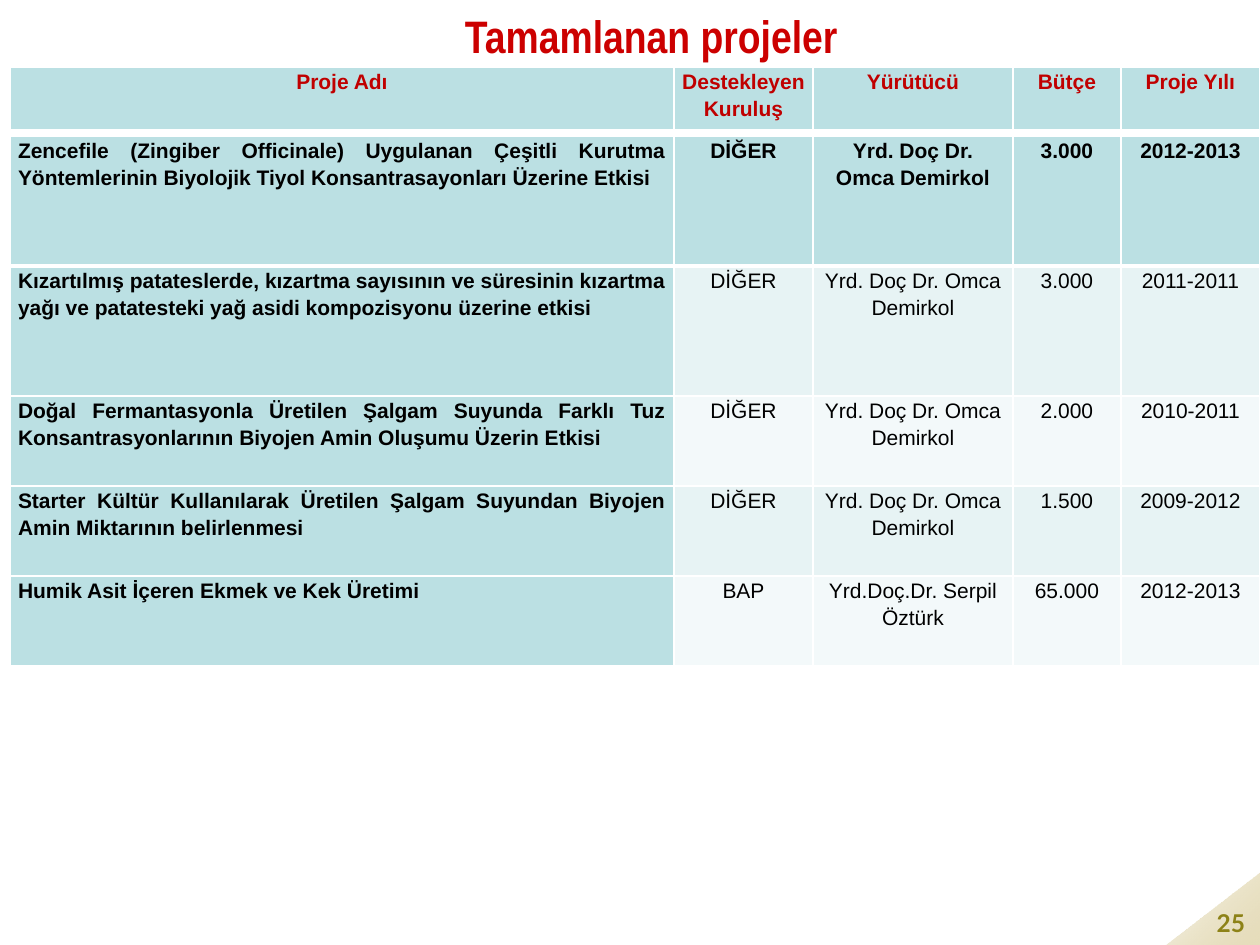
import pptx
import pptx.util
import pptx.dml.color
import pptx.enum.shapes
import pptx.enum.text
import pptx.oxml
import pptx.oxml.ns

COLORS = {"header": "C00000", "title": "CC0000", "text": "000000", "line": "FFFFFF",
          "strong": "BBE0E3", "band": "E7F3F4", "pale": "F3F9FA",
          "corner": "CEBC7A", "number": "8D8217", "shadow": "B2B2B2"}
ALIGN = pptx.enum.text.PP_ALIGN
NAMESPACE = pptx.oxml.ns.nsdecls("a")
COLUMN_WIDTHS = [664, 139, 200, 108, 139]


def px(length):
    return pptx.util.Emu(round(length * 914400 / 126))


def color(name):
    return pptx.dml.color.RGBColor.from_string(COLORS[name])


deck = pptx.Presentation()
deck.slide_width, deck.slide_height = px(1260), px(945)
slide = deck.slides.add_slide(deck.slide_layouts[6])

# Page corner
corner = slide.shapes.add_shape(
    pptx.enum.shapes.MSO_SHAPE.RIGHT_TRIANGLE, px(1166), px(872), px(94), px(73))
corner.shadow.inherit = False
corner.line.fill.background()
corner.fill.gradient()
corner.fill.gradient_angle = 45
for stop, name in zip(corner.fill.gradient_stops, ["corner", "line"]):
    stop.color.rgb = color(name)
first_color = corner._element.spPr.find(".//" + pptx.oxml.ns.qn("a:srgbClr"))
first_color.append(pptx.oxml.parse_xml(f'<a:alpha {NAMESPACE} val="50000"/>'))
corner._element.spPr.xfrm.set("flipH", "1")

# Page number and title
labels = [("25", (1189, 902, 84, 42), "Lato", 14, "number"),
          ("Tamamlanan projeler", (431, 10, 441, 57), "Arial Narrow", 26, "title")]
for text, place, font_name, size, color_name in labels:
    box = slide.shapes.add_textbox(*[px(length) for length in place])
    box.text_frame.word_wrap = True
    box.text_frame.vertical_anchor = pptx.enum.text.MSO_ANCHOR.MIDDLE
    para = box.text_frame.paragraphs[0]
    para.alignment = ALIGN.CENTER
    span = para.add_run()
    span.text = text
    span.font.size = pptx.util.Pt(size)
    span.font.bold = True
    span.font.color.rgb = color(color_name)
    if color_name == "title":
        para.line_spacing = 0.9
        span.font._element.append(pptx.oxml.parse_xml(
            f'<a:effectLst {NAMESPACE}><a:outerShdw dist="35921" dir="2700000">'
            f'<a:srgbClr val="{COLORS["shadow"]}"/></a:outerShdw></a:effectLst>'))
    span.font.name = font_name

# Project tables
header = [["Proje Adı", "Destekleyen Kuruluş", "Yürütücü", "Bütçe", "Proje Yılı"]]
projects = [
    ["Zencefile (Zingiber Officinale) Uygulanan Çeşitli Kurutma Yöntemlerinin "
     "Biyolojik Tiyol Konsantrasayonları Üzerine Etkisi",
     "DİĞER", "Yrd. Doç Dr. Omca Demirkol", "3.000", "2012-2013"],
    ["Kızartılmış patateslerde, kızartma sayısının ve süresinin kızartma yağı ve "
     "patatesteki yağ asidi kompozisyonu üzerine etkisi",
     "DİĞER", "Yrd. Doç Dr. Omca Demirkol", "3.000", "2011-2011"],
    ["Doğal Fermantasyonla Üretilen Şalgam Suyunda Farklı Tuz Konsantrasyonlarının "
     "Biyojen Amin Oluşumu Üzerin Etkisi",
     "DİĞER", "Yrd. Doç Dr. Omca Demirkol", "2.000", "2010-2011"],
    ["Starter Kültür Kullanılarak Üretilen Şalgam Suyundan Biyojen Amin Miktarının "
     "belirlenmesi",
     "DİĞER", "Yrd. Doç Dr. Omca Demirkol", "1.500", "2009-2012"],
    ["Humik Asit İçeren Ekmek ve Kek Üretimi",
     "BAP", "Yrd.Doç.Dr. Serpil Öztürk", "65.000", "2012-2013"],
]
tables = [(header, 67, [64], "header", ALIGN.CENTER),
          (projects, 136, [130, 130, 90, 90, 90], "text", ALIGN.JUSTIFY)]

for rows, top, heights, text_color, name_alignment in tables:
    table = slide.shapes.add_table(len(rows), len(COLUMN_WIDTHS), px(10), px(top),
                                   px(sum(COLUMN_WIDTHS)), px(sum(heights))).table
    table.first_row = table.horz_banding = False
    for column, width in zip(table.columns, COLUMN_WIDTHS):
        column.width = px(width)
    for row_index, (values, height) in enumerate(zip(rows, heights)):
        table.rows[row_index].height = px(height)
        for column_index, value in enumerate(values):
            strong = row_index == 0 or column_index == 0
            cell = table.cell(row_index, column_index)
            cell.text = value
            cell.margin_left = cell.margin_right = px(8)
            cell.margin_top = cell.margin_bottom = 0
            para = cell.text_frame.paragraphs[0]
            para.alignment = name_alignment if column_index == 0 else ALIGN.CENTER
            para.line_spacing = 1.15
            para.font.name = "Arial"
            para.font.size = pptx.util.Pt(12)
            para.font.bold = strong
            para.font.color.rgb = color(text_color)
            properties = cell._tc.get_or_add_tcPr()
            for side in ["L", "R", "T", "B"]:
                thick = (side == "B" and row_index == 0) or (side == "T" and row_index == 1)
                width = pptx.util.Pt(3 if thick else 1)
                properties.append(pptx.oxml.parse_xml(
                    f'<a:ln{side} {NAMESPACE} w="{width}"><a:solidFill>'
                    f'<a:srgbClr val="{COLORS["line"]}"/></a:solidFill></a:ln{side}>'))
            cell.fill.solid()
            band = "band" if row_index % 2 else "pale"
            cell.fill.fore_color.rgb = color("strong" if strong else band)

deck.save("out.pptx")
